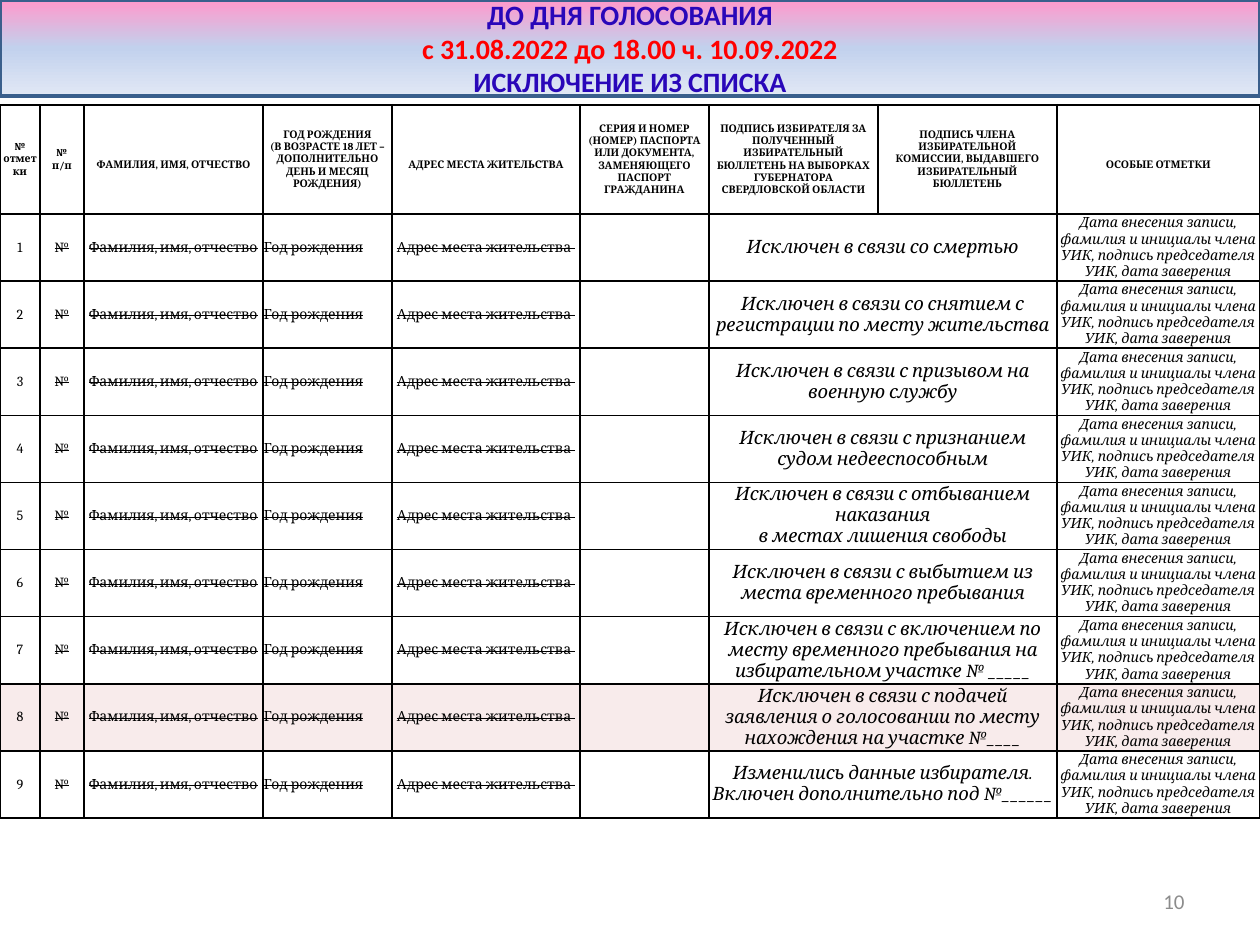
from copy import deepcopy

from lxml import etree
from pptx import Presentation
from pptx.dml.color import RGBColor
from pptx.enum.shapes import MSO_SHAPE
from pptx.enum.text import MSO_ANCHOR, PP_ALIGN
from pptx.oxml.ns import qn
from pptx.util import Pt

PX = 914400 // 126
RECT = MSO_SHAPE.RECTANGLE
MIDDLE = MSO_ANCHOR.MIDDLE
LEFT, CENTER, RIGHT = PP_ALIGN.LEFT, PP_ALIGN.CENTER, PP_ALIGN.RIGHT

BLACK = RGBColor(0x00, 0x00, 0x00)
GRAY = RGBColor(0x8C, 0x8C, 0x8C)
RED = RGBColor(0xFF, 0x00, 0x00)
INDIGO = RGBColor(0x29, 0x07, 0xB9)
STEEL = RGBColor(0x3A, 0x5F, 0x8C)
ROSE = RGBColor(0xE6, 0xB9, 0xB8)
BANNER_STOPS = [(0, RGBColor(0xFF, 0x99, 0xCC)), (0.5, RGBColor(0xC2, 0xD1, 0xED)),
                (1, RGBColor(0xE1, 0xE8, 0xF5))]

COLUMN_WIDTHS = [40, 44, 179, 129, 188, 129, 169, 179, 203]
HEADER_HEIGHT, ROW_HEIGHT = 109, 64
REASON, MARKS = 6, 8  # columns
HIGHLIGHTED_ROW = 8

HEADINGS = [
    ["№ отметки"],
    ["№", "п/п"],
    ["ФАМИЛИЯ, ИМЯ, ОТЧЕСТВО"],
    ["ГОД РОЖДЕНИЯ", "(В ВОЗРАСТЕ 18 ЛЕТ –", "ДОПОЛНИТЕЛЬНО", "ДЕНЬ И МЕСЯЦ", "РОЖДЕНИЯ)"],
    ["АДРЕС МЕСТА ЖИТЕЛЬСТВА"],
    ["СЕРИЯ И НОМЕР (НОМЕР) ПАСПОРТА ИЛИ ДОКУМЕНТА, ЗАМЕНЯЮЩЕГО ПАСПОРТ ГРАЖДАНИНА"],
    ["ПОДПИСЬ ИЗБИРАТЕЛЯ ЗА ПОЛУЧЕННЫЙ ИЗБИРАТЕЛЬНЫЙ БЮЛЛЕТЕНЬ НА ВЫБОРКАХ "
     "ГУБЕРНАТОРА СВЕРДЛОВСКОЙ ОБЛАСТИ"],
    ["ПОДПИСЬ ЧЛЕНА", "ИЗБИРАТЕЛЬНОЙ", "КОМИССИИ, ВЫДАВШЕГО", "ИЗБИРАТЕЛЬНЫЙ", "БЮЛЛЕТЕНЬ"],
    ["ОСОБЫЕ ОТМЕТКИ"],
]
LOWERED_HEADINGS = (2, 4, 8)
STRUCK_ENTRIES = ["№", "Фамилия, имя, отчество", "Год рождения", "Адрес места жительства "]
REASONS = [
    ["Исключен в связи со смертью"],
    ["Исключен в связи со снятием с регистрации по месту жительства"],
    ["Исключен в связи с призывом на военную службу"],
    ["Исключен в связи с признанием судом недееспособным"],
    ["Исключен в связи с отбыванием наказания", "в местах лишения свободы"],
    ["Исключен в связи с выбытием из места временного пребывания"],
    ["Исключен в связи с включением по месту временного пребывания "
     "на избирательном участке № _____"],
    ["Исключен в связи с подачей заявления о голосовании по месту нахождения на участке №____"],
    ["Изменились данные избирателя. Включен дополнительно под №______"],
]
MARK_NOTE = ("Дата внесения записи, фамилия и инициалы члена УИК, "
             "подпись председателя УИК, дата заверения")


def write(frame, lines, size, font, color=BLACK, align=CENTER, bold=False, italic=False,
          strike=False):
    for i, line in enumerate(lines):
        paragraph = frame.paragraphs[0] if i == 0 else frame.add_paragraph()
        paragraph.alignment = align
        run = paragraph.add_run()
        run.text = line
        run.font.size, run.font.name = Pt(size), font
        run.font.bold, run.font.italic = bold, italic
        run.font.color.rgb = color[i] if isinstance(color, list) else color
        if strike:
            run.font._element.set("strike", "sngStrike")


def add_border(cell, side, width):
    line = etree.SubElement(cell._tc.get_or_add_tcPr(), qn("a:ln" + side), w=str(Pt(width)))
    fill = etree.SubElement(line, qn("a:solidFill"))
    etree.SubElement(fill, qn("a:srgbClr"), val=str(BLACK))


deck = Presentation()
deck.slide_width, deck.slide_height = 1260 * PX, 945 * PX
slide = deck.slides.add_slide(deck.slide_layouts[6])

# Page number
number = slide.shapes.add_textbox(903 * PX, 876 * PX, 294 * PX, 50 * PX).text_frame
number.word_wrap = True
number.vertical_anchor = MIDDLE
write(number, ["10"], 12, "Calibri", GRAY, RIGHT)

# Title banner
banner = slide.shapes.add_shape(RECT, 0, 0, 1260 * PX, 96 * PX)
banner.shadow.inherit = False
banner.line.color.rgb, banner.line.width = STEEL, Pt(2)
banner.fill.gradient()
banner.fill.gradient_angle = 270
stop_list = banner._element.spPr.find(qn("a:gradFill")).find(qn("a:gsLst"))
stop_list.append(deepcopy(stop_list[0]))
for stop, (position, color) in zip(banner.fill.gradient_stops, BANNER_STOPS):
    stop.position, stop.color.rgb = position, color
banner.text_frame.word_wrap = True
banner.text_frame.vertical_anchor = MIDDLE
write(banner.text_frame,
      ["ДО ДНЯ ГОЛОСОВАНИЯ", "с 31.08.2022 до 18.00 ч. 10.09.2022", "ИСКЛЮЧЕНИЕ ИЗ СПИСКА"],
      16, "Calibri", [INDIGO, RED, INDIGO], bold=True)

# Voter list grid
table_height = HEADER_HEIGHT + ROW_HEIGHT * len(REASONS)
voters = slide.shapes.add_table(len(REASONS) + 1, len(COLUMN_WIDTHS), 0, 105 * PX,
                                1260 * PX, table_height * PX).table
voters.first_row = voters.horz_banding = False
for column, width in zip(voters.columns, COLUMN_WIDTHS):
    column.width = width * PX
for r, row in enumerate(voters.rows):
    row.height = (ROW_HEIGHT if r else HEADER_HEIGHT) * PX
    for c, cell in enumerate(row.cells):
        cell.margin_left = cell.margin_right = PX
        cell.margin_top = cell.margin_bottom = 0
        cell.vertical_anchor = MIDDLE
        heavy = c > 0
        add_border(cell, "L", 1)
        add_border(cell, "R", 1.5 if c == MARKS else 1)
        add_border(cell, "T", 1.5 if heavy and r < 2 else 1)
        add_border(cell, "B", 1.5 if heavy and r == 0 else 1)
        if r == HIGHLIGHTED_ROW:
            cell.fill.solid()
            cell.fill.fore_color.rgb = ROSE
            tint = cell._tc.tcPr.find(qn("a:solidFill"))[0]
            etree.SubElement(tint, qn("a:alpha"), val="28000")
        else:
            cell.fill.background()

# Column headings
for c, heading in enumerate(HEADINGS):
    cell = voters.cell(0, c)
    if c in LOWERED_HEADINGS:
        cell.margin_top = 11 * PX
    write(cell.text_frame, heading, 6, "Cambria", bold=True)

# Exclusion entries
for r, reason in enumerate(REASONS, start=1):
    write(voters.cell(r, 0).text_frame, [str(r)], 8, "Cambria")
    for c, entry in enumerate(STRUCK_ENTRIES, start=1):
        write(voters.cell(r, c).text_frame, [entry], 8, "Cambria",
              align=LEFT if c == 3 else CENTER, strike=True)
    voters.cell(r, REASON).merge(voters.cell(r, REASON + 1))
    write(voters.cell(r, REASON).text_frame, reason, 10.5, "Cambria", italic=True)
    write(voters.cell(r, MARKS).text_frame, [MARK_NOTE], 8, "Cambria", italic=True)

deck.save("out.pptx")
